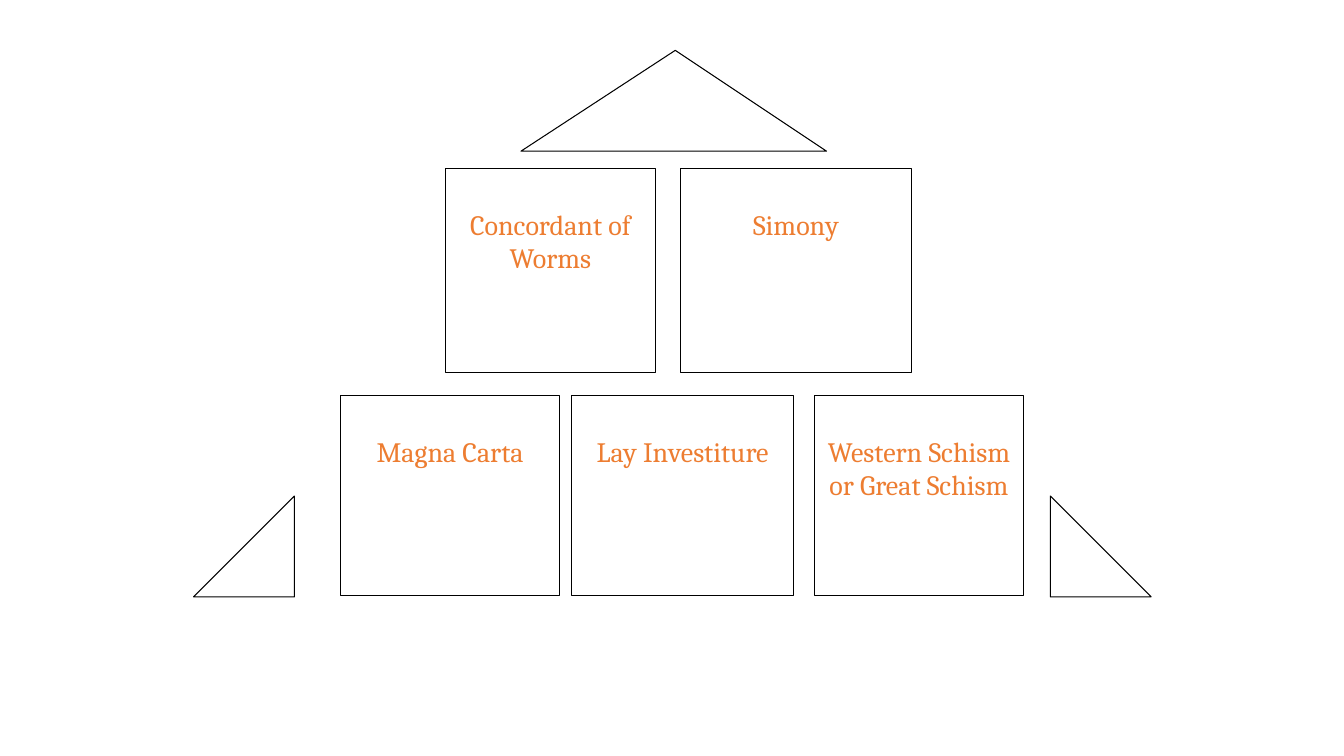
from pptx import Presentation
from pptx.dml.color import RGBColor
from pptx.enum.shapes import MSO_SHAPE
from pptx.enum.text import MSO_ANCHOR, PP_ALIGN
from pptx.util import Cm, Pt

HUES = {"paper": "FFFFFF", "edge": "000000", "term": "ED7D31"}
FRAME = {"word_wrap": True, "vertical_anchor": MSO_ANCHOR.TOP,
         "margin_top": Cm(0.98)}
FONT = {"name": "Cambria", "size": Pt(20)}

# Each row: box (left, top, width, height), then (term, offset, width)
ROWS = [
    ((11.23, 4.24, 11.74, 5.16),
     [("Concordant of Worms", 0, 5.28), ("Simony", 5.92, 5.82)]),
    ((8.59, 9.96, 17.21, 5.05),
     [("Magna Carta", 0, 5.51), ("Lay Investiture", 5.81, 5.61),
      ("Western Schism or Great Schism", 11.93, 5.28)]),
]


def hue(key):
    return RGBColor.from_string(HUES[key])


def style(obj, vals):
    for key, val in vals.items():
        setattr(obj, key, val)


def block(slide, kind, box):
    """Add one white outlined shape."""
    shape = slide.shapes.add_shape(kind, *[Cm(n) for n in box])
    shape.shadow.inherit = False
    shape.fill.solid()
    shape.fill.fore_color.rgb = hue("paper")
    shape.line.color.rgb = hue("edge")
    shape.line.width = Pt(0.75)
    return shape


def row(slide, box, cards):
    """Place a row of term cards in its box."""
    left, top, _, high = box
    for term, shift, wide in cards:
        card = block(slide, MSO_SHAPE.RECTANGLE,
                     (left + shift, top, wide, high))
        style(card.text_frame, FRAME)
        para = card.text_frame.paragraphs[0]
        para.alignment = PP_ALIGN.CENTER
        run = para.add_run()
        run.text = term
        style(run.font, FONT)
        run.font.color.rgb = hue("term")


def roof(slide, box):
    """Place the peak above the rows."""
    peak = block(slide, MSO_SHAPE.ISOSCELES_TRIANGLE, box)
    peak.adjustments[0] = 0.505


def feet(slide, box):
    """Place a corner wedge at each end of the box."""
    left, top, wide, side = box
    for start, turn in ((left, 270), (left + wide - side, 0)):
        wedge = block(slide, MSO_SHAPE.RIGHT_TRIANGLE,
                      (start, top, side, side))
        wedge.rotation = turn


def main():
    deck = Presentation()
    style(deck, {"slide_width": Cm(33.87), "slide_height": Cm(19.05)})
    slide = deck.slides.add_slide(deck.slide_layouts[6])
    # Pyramid of terms
    for box, cards in ROWS:
        row(slide, box, cards)
    # Outer triangles
    roof(slide, (13.13, 1.27, 7.7, 2.54))
    feet(slide, (4.88, 12.5, 24.13, 2.54))
    deck.save("out.pptx")


if __name__ == "__main__":
    main()
